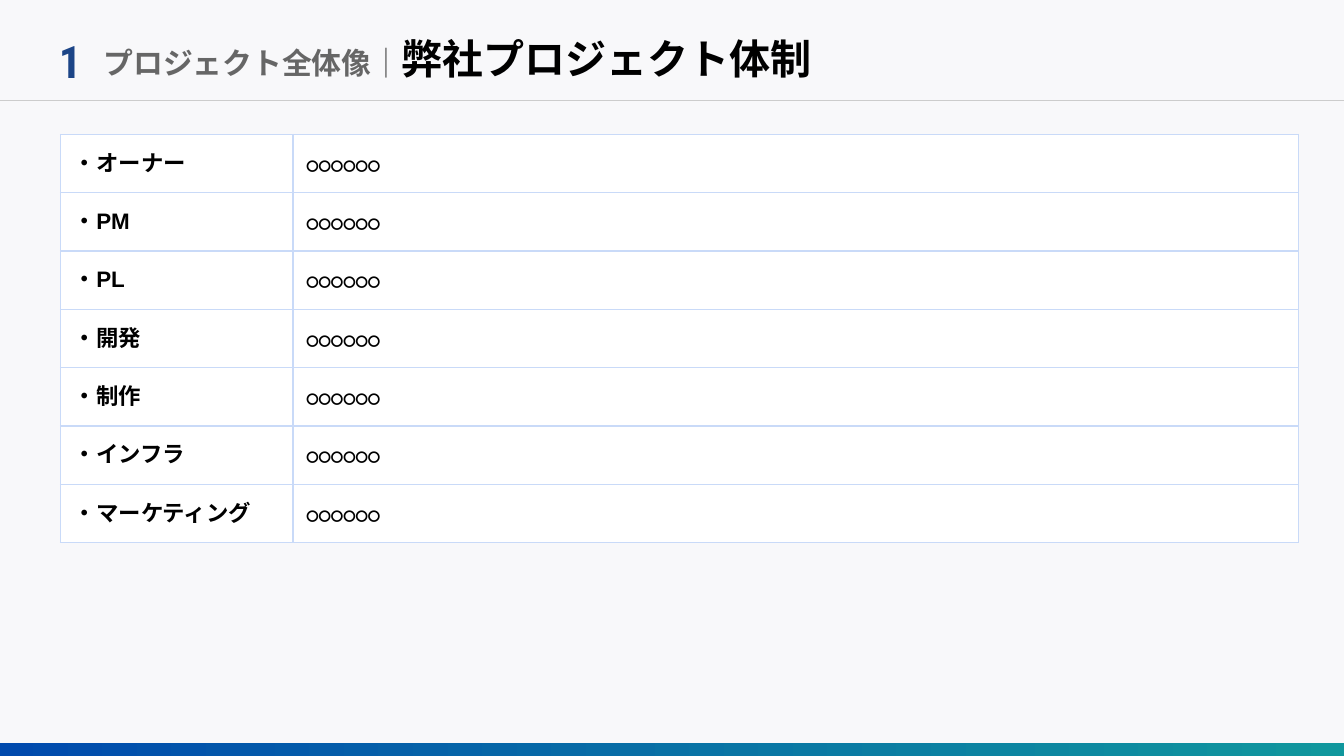
import lxml.etree
import pptx
import pptx.dml.color
import pptx.enum.shapes
import pptx.enum.text
import pptx.oxml.ns
import pptx.util

Inches = pptx.util.Inches
RGBColor = pptx.dml.color.RGBColor

BACKGROUND = RGBColor(0xF8, 0xF8, 0xFA)
RULE_GRAY = RGBColor(0xCC, 0xCC, 0xCC)
TEAL = RGBColor(0x10, 0x97, 0x9D)
BLUE = RGBColor(0x00, 0x4A, 0xAD)
NAVY = RGBColor(0x1C, 0x45, 0x87)
GRAY = RGBColor(0x66, 0x66, 0x66)
BLACK = RGBColor(0x00, 0x00, 0x00)
WHITE = RGBColor(0xFF, 0xFF, 0xFF)
BORDER = RGBColor(0xC9, 0xDA, 0xF8)

NUMBER_FONT = {"name": "Roboto Condensed", "size": pptx.util.Pt(24), "bold": True}
SECTION_FONT = {"name": "Calibri", "size": pptx.util.Pt(16), "bold": True}
TITLE_FONT = {"name": "Calibri", "size": pptx.util.Pt(22), "bold": True}
ROLE_FONT = {"name": "Arial", "size": pptx.util.Pt(12), "bold": True}
MEMBER_FONT = {"name": "Calibri", "size": pptx.util.Pt(12), "bold": False}
MEMBER_SPACING = {"line_spacing": 1.15, "space_after": pptx.util.Pt(5)}

ROLES = ["オーナー", "PM", "PL", "開発", "制作", "インフラ", "マーケティング"]
MEMBER = "○○○○○○"


def set_attributes(target, values):
    """Set every attribute named in a dict of values."""
    for name, value in values.items():
        setattr(target, name, value)


def add_run(paragraph, text, font, color):
    """Add a run whose font also covers East Asian and complex scripts."""
    run = paragraph.add_run()
    run.text = text
    set_attributes(run.font, font)
    run.font.color.rgb = color
    properties = run._r.get_or_add_rPr()
    for script in ("a:ea", "a:cs"):
        lxml.etree.SubElement(
            properties, pptx.oxml.ns.qn(script), typeface=font["name"])


def place_heading(shape, left, top, width, height, runs):
    """Place a heading shape and fill it with its runs."""
    box = {"left": left, "top": top, "width": width, "height": height}
    set_attributes(shape, {name: Inches(value) for name, value in box.items()})
    frame = shape.text_frame
    set_attributes(frame, {
        "word_wrap": True,
        "auto_size": pptx.enum.text.MSO_AUTO_SIZE.NONE,
        "vertical_anchor": pptx.enum.text.MSO_ANCHOR.TOP,
    })
    for side in ("left", "top", "right", "bottom"):
        setattr(frame, f"margin_{side}", Inches(0.1))
    paragraph = frame.paragraphs[0]
    paragraph.alignment = pptx.enum.text.PP_ALIGN.LEFT
    for text, font, color in runs:
        add_run(paragraph, text, font, color)


def add_header(slide, left, top, width, height):
    """Add the section number, the title and the rule below them."""
    number = slide.shapes.add_textbox(0, 0, 0, 0)
    place_heading(number, left + 0.35, top + 0.15, 0.73, 0.63, [("1", NUMBER_FONT, NAVY)])
    place_heading(slide.shapes.title, left + 0.68, top + 0.15, 6.16, 0.63, [
        ("プロジェクト全体像｜", SECTION_FONT, GRAY),
        ("弊社プロジェクト体制", TITLE_FONT, BLACK),
    ])
    rule = slide.shapes.add_connector(
        pptx.enum.shapes.MSO_CONNECTOR.STRAIGHT,
        Inches(left), Inches(top + height), Inches(left + width), Inches(top + height))
    rule.line.color.rgb = RULE_GRAY
    rule.line.width = pptx.util.Pt(0.75)
    properties = rule.element.find(pptx.oxml.ns.qn("p:spPr"))
    lxml.etree.SubElement(properties, pptx.oxml.ns.qn("a:effectLst"))


def add_footer(slide, left, top, width, height):
    """Add the gradient bar along the bottom edge."""
    bar = slide.shapes.add_shape(
        pptx.enum.shapes.MSO_SHAPE.RECTANGLE,
        Inches(left), Inches(top), Inches(width), Inches(height))
    bar.shadow.inherit = False
    bar.line.fill.background()
    bar.fill.gradient()
    bar.fill.gradient_angle = 180
    for stop, color in zip(bar.fill.gradient_stops, (TEAL, BLUE)):
        stop.color.rgb = color


def format_cell(cell):
    """Give a cell its borders, fill and margins."""
    qn = pptx.oxml.ns.qn
    properties = cell._tc.get_or_add_tcPr()
    for side in ("lnL", "lnR", "lnT", "lnB"):
        line = lxml.etree.SubElement(
            properties, qn(f"a:{side}"), w=str(pptx.util.Pt(0.75)))
        fill = lxml.etree.SubElement(line, qn("a:solidFill"))
        lxml.etree.SubElement(fill, qn("a:srgbClr"), val=str(BORDER))
    cell.fill.solid()
    cell.fill.fore_color.rgb = WHITE
    cell.vertical_anchor = pptx.enum.text.MSO_ANCHOR.MIDDLE
    for side in ("left", "top", "right", "bottom"):
        setattr(cell, f"margin_{side}", Inches(0.1))


def add_team_table(slide, left, top, width, height):
    """Add the table of roles and members."""
    table = slide.shapes.add_table(
        len(ROLES), 2, Inches(left), Inches(top), Inches(width), Inches(height)).table
    set_attributes(table, {"first_row": False, "horz_banding": False})
    role_width = 1.73
    table.columns[0].width = Inches(role_width)
    table.columns[1].width = Inches(width - role_width)
    for row, role in zip(table.rows, ROLES):
        row.height = Inches(height / len(ROLES))
        role_cell, member_cell = row.cells
        format_cell(role_cell)
        format_cell(member_cell)
        add_run(role_cell.text_frame.paragraphs[0], f"・{role}", ROLE_FONT, BLACK)
        paragraph = member_cell.text_frame.paragraphs[0]
        set_attributes(paragraph, MEMBER_SPACING)
        add_run(paragraph, MEMBER, MEMBER_FONT, BLACK)


def main():
    """Build and save the presentation."""
    presentation = pptx.Presentation()
    presentation.slide_width = Inches(10)
    presentation.slide_height = Inches(10 * 9 / 16)
    slide = presentation.slides.add_slide(presentation.slide_layouts[5])
    slide.background.fill.solid()
    slide.background.fill.fore_color.rgb = BACKGROUND
    add_header(slide, -0.01, 0, 10.02, 0.75)
    add_footer(slide, -0.01, 5.53, 10.02, 0.1)
    add_team_table(slide, 0.45, 1, 9.21, 2.89)
    presentation.save("out.pptx")


if __name__ == "__main__":
    main()
